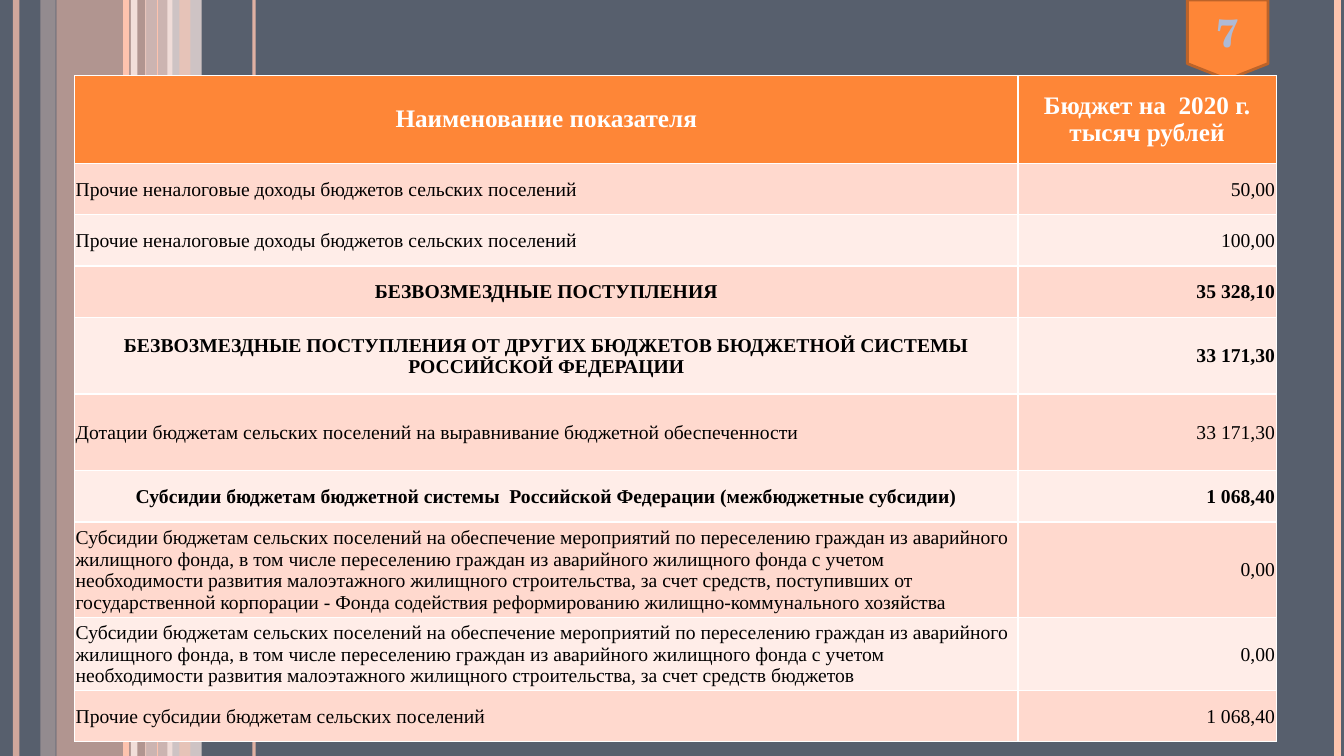
from lxml.etree import SubElement
from pptx import Presentation
from pptx.dml.color import RGBColor
from pptx.enum.shapes import MSO_CONNECTOR, MSO_SHAPE
from pptx.enum.text import MSO_ANCHOR, PP_ALIGN
from pptx.oxml import parse_xml
from pptx.oxml.ns import nsdecls, qn
from pptx.util import Inches, Pt

WIDE, HIGH = Inches(13.333), Inches(7.5)
ORANGE, PEACH, PINK, CREAM = "FE8637", "FEC3AE", "FFD9CE", "FFEDE8"
SERIF = "Times New Roman"

# Side decor, in percent: left, width, colour, opacity
BANDS = [
    (4.2, 6.67, PEACH, 54),
    (3, 1.15, PINK, 36),
    (10.8, 2.03, PINK, 70),
    (12.45, 2.55, CREAM, 71),
]
TOP_BAND = (13.35, 0.82, PEACH, 51)

# Place in percent, weight in points, colour, opacity
STRIPES = [
    (1.2, 4.5, PEACH, 73),
    (9.98, 4.5, CREAM, 83),
    (9.38, 4.5, PEACH, 100),
    (18.9, 2.25, PEACH, 82),
    (11.7, 0.75, PEACH, 100),
    (99.53, 4.5, PEACH, 100),
]

# Table grid, in percent of the slide
COLS = [70.2, 19.2]
ROWS = [11.6, 6.8, 6.8, 6.8, 10.13, 10.13, 6.8, 12.67, 9.6, 6.8]
HEAD = ("Наименование показателя", "Бюджет на  2020 г. тысяч рублей")
OTHER = "Прочие неналоговые доходы бюджетов сельских поселений"
HOUSING = (
    "Субсидии бюджетам сельских поселений на обеспечение мероприятий по "
    "переселению граждан из аварийного жилищного фонда, в том числе "
    "переселению граждан из аварийного жилищного фонда с учетом "
    "необходимости развития малоэтажного жилищного строительства, "
    "за счет средств"
)
# Name, sum, whether it is a bold heading
ITEMS = [
    (OTHER, "50,00", False),
    (OTHER, "100,00", False),
    ("БЕЗВОЗМЕЗДНЫЕ ПОСТУПЛЕНИЯ", "35 328,10", True),
    ("БЕЗВОЗМЕЗДНЫЕ ПОСТУПЛЕНИЯ ОТ ДРУГИХ БЮДЖЕТОВ БЮДЖЕТНОЙ СИСТЕМЫ "
     "РОССИЙСКОЙ ФЕДЕРАЦИИ", "33 171,30", True),
    ("Дотации бюджетам сельских поселений на выравнивание бюджетной "
     "обеспеченности", "33 171,30", False),
    ("Субсидии бюджетам бюджетной системы  Российской Федерации "
     "(межбюджетные субсидии)", "1 068,40", True),
    (HOUSING + ", поступивших от государственной корпорации - Фонда "
     "содействия реформированию жилищно-коммунального хозяйства",
     "0,00", False),
    (HOUSING + " бюджетов", "0,00", False),
    ("Прочие субсидии бюджетам сельских поселений", "1 068,40", False),
]


def across(part):
    return round(WIDE * part / 100)


def down(part):
    return round(HIGH * part / 100)


def paint(fill, tone):
    fill.solid()
    fill.fore_color.rgb = RGBColor.from_string(tone)


def fade(shape, part):
    if part < 100:
        tone = shape._element.spPr.find(".//" + qn("a:srgbClr"))
        SubElement(tone, qn("a:alpha"), val=str(part * 1000))


def outline(tag, tone, size):
    return parse_xml(
        f'<a:{tag} {nsdecls("a")} w="{Pt(size)}"><a:solidFill>'
        f'<a:srgbClr val="{tone}"/></a:solidFill></a:{tag}>')


def write(frame, text, align, tone, **form):
    line = frame.paragraphs[0]
    line.alignment = align
    run = line.add_run()
    run.text = text
    for key, value in form.items():
        setattr(run.font, key, value)
    paint(run.font.fill, tone)
    return run


def add_band(slide, left, width, tone, part):
    band = slide.shapes.add_shape(
        MSO_SHAPE.RECTANGLE, across(left), 0, across(width), HIGH)
    band.shadow.inherit = False
    paint(band.fill, tone)
    band.line.fill.background()
    fade(band, part)


def add_stripe(slide, place, size, tone, part):
    x = across(place)
    stripe = slide.shapes.add_connector(MSO_CONNECTOR.STRAIGHT, x, 0, x, HIGH)
    stripe.line.width = Pt(size)
    paint(stripe.line.fill, tone)
    fade(stripe, part)
    SubElement(stripe._element.spPr, qn("a:effectLst"))


def add_badge(slide, text):
    badge = slide.shapes.add_shape(
        MSO_SHAPE.FLOWCHART_OFFPAGE_CONNECTOR,
        across(88.35), 0, across(6), down(10.53))
    badge.shadow.inherit = False
    paint(badge.fill, ORANGE)
    paint(badge.line.fill, "BC6329")
    badge.line.width = Pt(2)
    badge.text_frame.vertical_anchor = MSO_ANCHOR.MIDDLE
    run = write(badge.text_frame, text, PP_ALIGN.CENTER, "AEBAD5",
                name="TeX Gyre Schola", size=Pt(28), bold=True)
    run.font._element.insert(0, outline("ln", "000000", 0.75))


def fill_cell(cell, text, align, back, tone, size, bold):
    cell.vertical_anchor = MSO_ANCHOR.MIDDLE
    paint(cell.fill, back)
    for spot, side in enumerate("LRTB"):
        edge = outline("ln" + side, "FFFFFF", 1)
        cell._tc.tcPr.insert(spot, edge)
    write(cell.text_frame, text, align, tone,
          name=SERIF, size=Pt(size), bold=bold)


def add_budget(slide):
    table = slide.shapes.add_table(
        len(ROWS), len(COLS), across(5.55), down(10),
        across(sum(COLS)), down(sum(ROWS))).table
    for col, part in zip(table.columns, COLS):
        col.width = across(part)
    for row, part in zip(table.rows, ROWS):
        row.height = down(part)

    # Heading row
    for spot, text in enumerate(HEAD):
        fill_cell(table.cell(0, spot), text, PP_ALIGN.CENTER,
                  ORANGE, "FFFFFF", 18, True)

    # Striped rows with tight margins
    tight = {"margin_left": Pt(0.75), "margin_right": Pt(0.75),
             "margin_top": Pt(0.75), "margin_bottom": 0}
    for at, (name, total, bold) in enumerate(ITEMS, 1):
        back = PINK if at % 2 else CREAM
        first = PP_ALIGN.CENTER if bold else PP_ALIGN.LEFT
        pairs = [(name, first), (total, PP_ALIGN.RIGHT)]
        for spot, (text, align) in enumerate(pairs):
            cell = table.cell(at, spot)
            for key, value in tight.items():
                setattr(cell, key, value)
            fill_cell(cell, text, align, back, "000000", 14, bold)


def main():
    deck = Presentation()
    deck.slide_width, deck.slide_height = WIDE, HIGH
    slide = deck.slides.add_slide(deck.slide_layouts[6])
    paint(slide.background.fill, "575F6D")

    # Side decor
    for band in BANDS:
        add_band(slide, *band)
    for stripe in STRIPES:
        add_stripe(slide, *stripe)
    add_band(slide, *TOP_BAND)

    # Page number and budget table
    add_badge(slide, "7")
    add_budget(slide)
    deck.save("out.pptx")


if __name__ == "__main__":
    main()
